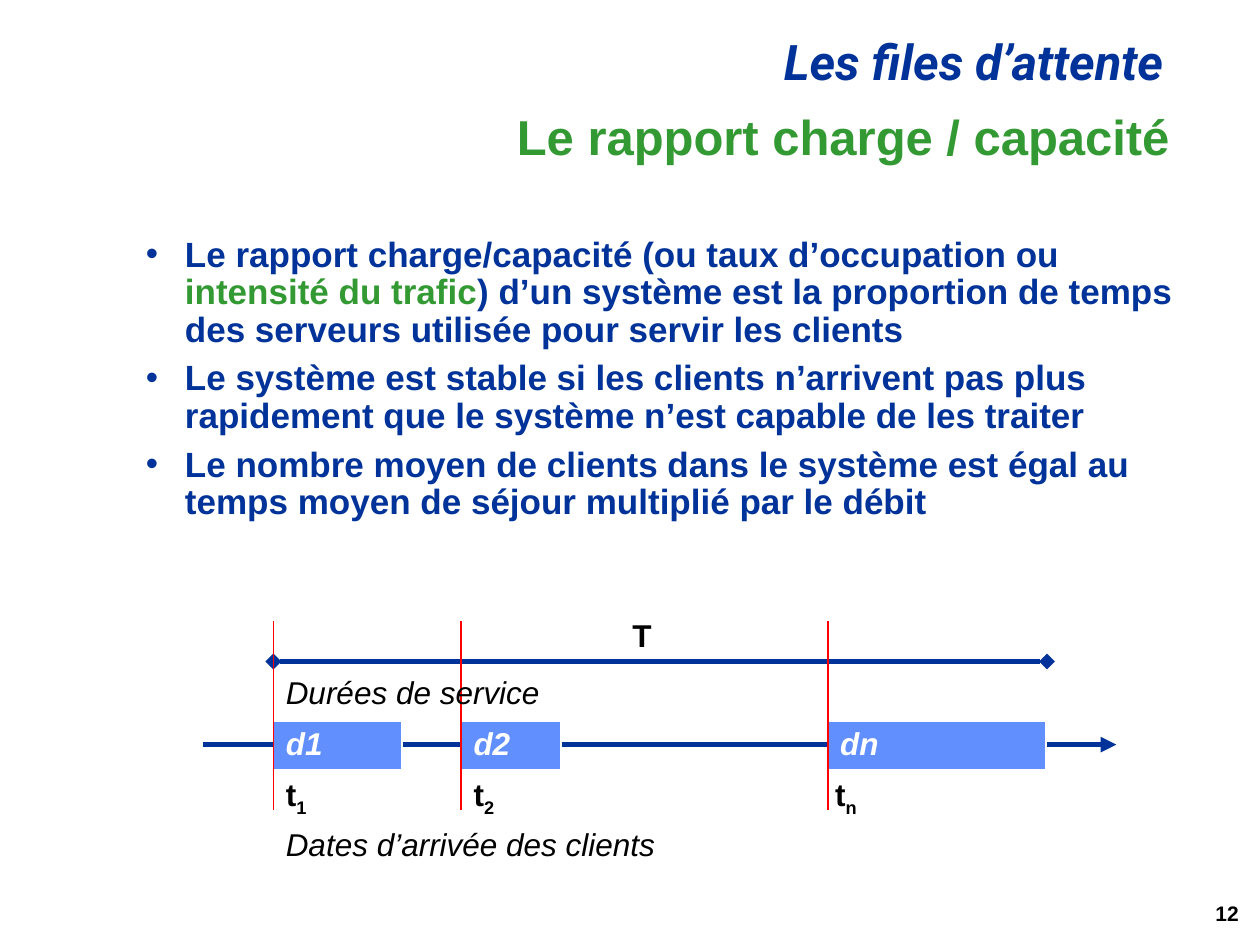
from pptx import Presentation
from pptx.dml.color import RGBColor
from pptx.enum import shapes, text
from pptx.oxml.ns import qn
from pptx.util import Inches, Pt
from lxml import etree

NAVY = RGBColor(0x00, 0x33, 0x99)
GREEN = RGBColor(0x33, 0x99, 0x33)
BLUE = RGBColor(0x61, 0x8F, 0xFD)
RED = RGBColor(0xFF, 0x00, 0x00)
BLACK = RGBColor(0x00, 0x00, 0x00)
WHITE = RGBColor(0xFF, 0xFF, 0xFF)

RIGHT = text.PP_ALIGN.RIGHT
MIDDLE = text.MSO_ANCHOR.MIDDLE


def write(paragraph, content, *, size=18, font="Arial", color=BLACK, bold=False,
          italic=False, align=text.PP_ALIGN.LEFT, spacing=0.9, baseline=None):
    """Append a formatted run to a paragraph."""
    paragraph.alignment = align
    paragraph.line_spacing = spacing
    run = paragraph.add_run()
    run.text = content
    run.font.name = font
    run.font.size = Pt(size)
    run.font.bold = bold
    run.font.italic = italic
    run.font.color.rgb = color
    if baseline is not None:
        run.font._element.set("baseline", str(baseline * 1000))


def add_text_box(parent, left, top, width, height, *, wrap=True,
                 anchor=text.MSO_ANCHOR.TOP):
    """Add an empty text box and return its text frame."""
    box = parent.add_textbox(Inches(left), Inches(top), Inches(width), Inches(height))
    box.text_frame.word_wrap = wrap
    box.text_frame.vertical_anchor = anchor
    return box.text_frame


def add_label(parent, left, top, width, height, content, *, wrap=True,
              anchor=text.MSO_ANCHOR.TOP, **style):
    frame = add_text_box(parent, left, top, width, height, wrap=wrap, anchor=anchor)
    write(frame.paragraphs[0], content, **style)
    return frame


def add_line(parent, x1, y1, x2, y2, color, width, head=None, tail=None):
    line = parent.add_connector(shapes.MSO_CONNECTOR.STRAIGHT, Inches(x1), Inches(y1),
                                Inches(x2), Inches(y2))
    line.line.color.rgb = color
    line.line.width = Pt(width)
    outline = line.line._get_or_add_ln()
    for tag, kind in (("a:headEnd", head), ("a:tailEnd", tail)):
        if kind:
            etree.SubElement(outline, qn(tag), type=kind)
    etree.SubElement(line._element.spPr, qn("a:effectLst"))


def add_bullet(paragraph, indent):
    properties = paragraph._p.get_or_add_pPr()
    properties.set("marL", str(Inches(indent)))
    properties.set("indent", str(-Inches(indent)))
    etree.SubElement(properties, qn("a:buFont"), typeface="Arial")
    etree.SubElement(properties, qn("a:buChar"), char="•")


def add_headings(slide):
    style = dict(size=28, bold=True, align=RIGHT)
    add_label(slide.shapes, 1.25, 0.25, 8.08, 0.52, "Les files d’attente",
              font="Roboto", color=NAVY, italic=True, **style)
    add_label(slide.shapes, 1.46, 0.86, 7.92, 0.5, "Le rapport charge / capacité",
              color=GREEN, anchor=MIDDLE, **style)


def add_body(slide, left, top, width, height):
    bullets = [
        [("Le rapport charge/capacité (ou taux d’occupation ou ", NAVY),
         ("intensité du trafic", GREEN),
         (") d’un système est la proportion de temps des serveurs utilisée "
          "pour servir les clients", NAVY)],
        [("Le système est stable si les clients n’arrivent pas plus rapidement "
          "que le système n’est capable de les traiter", NAVY)],
        [("Le nombre moyen de clients dans le système est égal au temps moyen "
          "de séjour multiplié par le débit", NAVY)],
    ]
    frame = add_text_box(slide.shapes, left, top, width, height)
    for index, runs in enumerate(bullets):
        paragraph = frame.add_paragraph() if index else frame.paragraphs[0]
        for content, color in runs:
            write(paragraph, content, size=20, color=color, bold=True)
        paragraph.space_before = Pt(6 if index else 0)
        add_bullet(paragraph, 0.31)


def add_service(parent, left, top, width, height, name):
    service = parent.add_shape(shapes.MSO_SHAPE.RECTANGLE, Inches(left), Inches(top),
                               Inches(width), Inches(height))
    service.shadow.inherit = False
    service.fill.solid()
    service.fill.fore_color.rgb = BLUE
    service.line.color.rgb = WHITE
    service.line.width = Pt(1)
    service.text_frame.vertical_anchor = MIDDLE
    write(service.text_frame.paragraphs[0], name, color=WHITE, bold=True, italic=True)


def add_timeline(slide, left, top):
    """Draw the arrivals and service times, from the top of the arrival marks."""
    parent = slide.shapes.add_group_shape().shapes
    start, end = left + 0.56, left + 6.7
    axis, period = top + 0.98, top + 0.32
    # index, arrival, service time, label shift, label width
    clients = [("1", start, 1.02, 0, 0.38),
               ("2", start + 1.49, 0.79, 0, 0.38),
               ("n", start + 4.4, 1.73, -0.04, 0.51)]

    add_line(parent, left, axis, left + 7.25, axis, NAVY, 3, tail="triangle")
    add_line(parent, start, period, end, period, NAVY, 3, head="diamond", tail="diamond")
    for index, arrival, duration, shift, width in clients:
        add_service(parent, arrival, axis - 0.19, duration, 0.39, f"d{index}")
        frame = add_label(parent, arrival + shift, top + 1.18, width, 0.37, "t",
                          wrap=False, bold=True)
        write(frame.paragraphs[0], index, bold=True, baseline=-25)
        add_line(parent, arrival, top, arrival, top + 1.5, RED, 1)

    add_label(parent, left + 3.31, top - 0.06, 0.36, 0.37, "T", wrap=False, bold=True)
    add_label(parent, start, top + 1.6, 3.16, 0.37, "Dates d’arrivée des clients",
              wrap=False, italic=True)
    add_label(parent, start, top + 0.4, 2.24, 0.37, "Durées de service",
              wrap=False, italic=True)


def main():
    presentation = Presentation()
    presentation.slide_width = Inches(10)
    presentation.slide_height = Inches(7.5)
    slide = presentation.slides.add_slide(presentation.slide_layouts[6])
    add_headings(slide)
    add_body(slide, 1.06, 1.83, 8.66, 2.78)
    add_label(slide.shapes, 7.68, 7.05, 2.25, 0.4, "12", size=12, bold=True,
              align=RIGHT, spacing=1.0, anchor=MIDDLE)
    add_timeline(slide, 1.61, 4.93)
    presentation.save("out.pptx")


if __name__ == "__main__":
    main()
